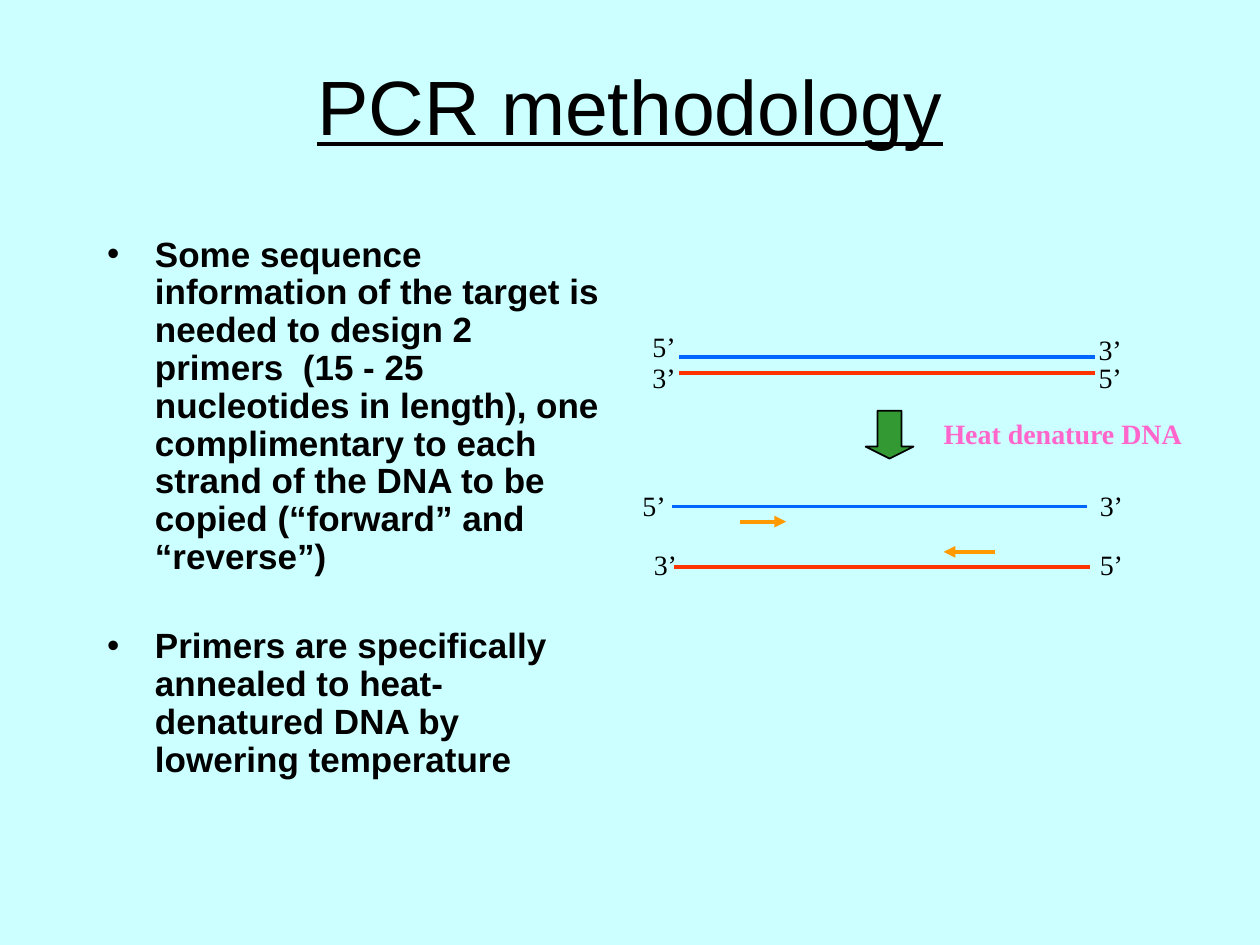
from lxml.etree import SubElement
from pptx import Presentation
from pptx.dml.color import RGBColor
from pptx.enum.shapes import MSO_CONNECTOR, MSO_SHAPE
from pptx.enum.text import MSO_ANCHOR, MSO_AUTO_SIZE, PP_ALIGN
from pptx.oxml.ns import qn
from pptx.util import Inches, Pt

SKY = RGBColor(0xCC, 0xFF, 0xFF)
BLACK = RGBColor(0, 0, 0)
BLUE = RGBColor(0x00, 0x66, 0xFF)
RED = RGBColor(0xFF, 0x33, 0x00)
ORANGE = RGBColor(0xFF, 0x99, 0x00)
GREEN = RGBColor(0x33, 0x99, 0x33)
PINK = RGBColor(0xFF, 0x66, 0xCC)
SANS, SERIF = "Arial", "Times New Roman"

TITLE = "PCR methodology"
# text, space before in points
POINTS = [
    ("Some sequence information of the target is needed to design 2 "
     "primers  (15 - 25 nucleotides in length), one complimentary to each "
     "strand of the DNA to be copied (“forward” and “reverse”)", 4),
    ("Primers are specifically annealed to heat-denatured DNA by "
     "lowering temperature", 29.5),
]
STEP = "Heat denature DNA"
SPAN = 3.3
# start x, y, colour, then (text, left, top) of the two end labels
STRANDS = [
    (5.39, 2.83, BLUE, ("5’", 5.08, 2.57), ("3’", 8.62, 2.59)),
    (5.39, 2.96, RED, ("3’", 5.08, 2.81), ("5’", 8.62, 2.81)),
    (5.33, 4.02, BLUE, ("5’", 5.00, 3.83), ("3’", 8.63, 3.83)),
    (5.35, 4.50, RED, ("3’", 5.09, 4.30), ("5’", 8.63, 4.30)),
]
# from x, to x, y
PRIMERS = [(5.87, 6.24, 4.14), (7.9, 7.49, 4.38)]


def place(shape, *box):
    shape.left, shape.top, shape.width, shape.height = map(Inches, box)


def write(para, text, size, face, color, bold=False):
    run = para.add_run()
    run.text = text
    font = run.font
    font.size, font.name, font.bold = Pt(size), face, bold
    font.color.rgb = color
    return font


def label(slide, text, box, color=BLACK, bold=False):
    frame = slide.shapes.add_textbox(*map(Inches, box)).text_frame
    frame.word_wrap = False
    frame.auto_size = MSO_AUTO_SIZE.SHAPE_TO_FIT_TEXT
    write(frame.paragraphs[0], text, 16, SERIF, color, bold)


def draw(slide, start, end, y, color, head=False):
    """Add a level line, with a triangle at its end if head is set."""
    line = slide.shapes.add_connector(
        MSO_CONNECTOR.STRAIGHT, *map(Inches, (start, y, end, y)))
    line.line.color.rgb = color
    line.line.width = Pt(2.25)
    if head:
        SubElement(line.line._get_or_add_ln(), qn("a:tailEnd"), type="triangle")
    SubElement(line._element.spPr, qn("a:effectLst"))


def bullet(para):
    props = para._p.get_or_add_pPr()
    props.set("marL", str(Inches(0.38)))
    props.set("indent", str(-Inches(0.38)))
    SubElement(props, qn("a:buFont"), typeface=SANS)
    SubElement(props, qn("a:buChar"), char="•")


def main():
    deck = Presentation()
    deck.slide_width, deck.slide_height = Inches(10), Inches(7.5)
    slide = deck.slides.add_slide(deck.slide_layouts[1])
    fill = slide.background.fill
    fill.solid()
    fill.fore_color.rgb = SKY

    title, body = slide.placeholders
    place(title, 0.75, 0.21, 8.5, 1.25)
    title.text_frame.vertical_anchor = MSO_ANCHOR.MIDDLE
    head = title.text_frame.paragraphs[0]
    head.alignment = PP_ALIGN.CENTER
    write(head, TITLE, 44, SANS, BLACK).underline = True

    place(body, 0.75, 1.83, 4.17, 4.5)
    frame = body.text_frame
    frame.auto_size = MSO_AUTO_SIZE.NONE
    for i, (text, gap) in enumerate(POINTS):
        para = frame.add_paragraph() if i else frame.paragraphs[0]
        para.line_spacing = 0.9
        para.space_before = Pt(gap)
        bullet(para)
        write(para, text, 20, SANS, BLACK, True)

    for x, y, color, *ends in STRANDS:
        draw(slide, x, x + SPAN, y, color)
        for text, left, top in ends:
            label(slide, text, (left, top, 0.39, 0.37))
    for start, end, y in PRIMERS:
        draw(slide, start, end, y, ORANGE, head=True)

    arrow = slide.shapes.add_shape(
        MSO_SHAPE.DOWN_ARROW, *map(Inches, (6.87, 3.26, 0.38, 0.38)))
    arrow.adjustments[0], arrow.adjustments[1] = 0.5, 0.25
    arrow.shadow.inherit = False
    arrow.fill.solid()
    arrow.fill.fore_color.rgb = GREEN
    arrow.line.color.rgb = BLACK
    arrow.line.width = Pt(1)
    label(slide, STEP, (7.39, 3.26, 2.1, 0.36), PINK, True)

    deck.save("out.pptx")


if __name__ == "__main__":
    main()
